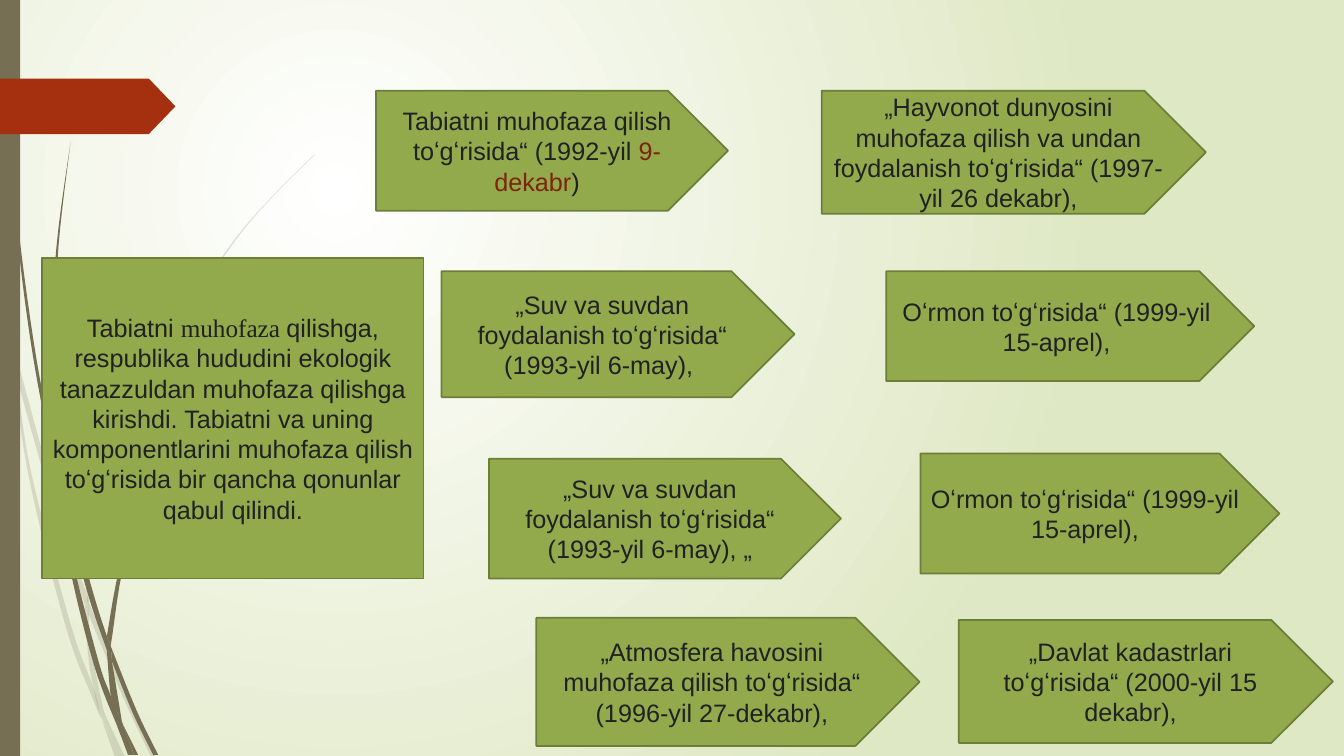
from lxml import etree
from pptx import Presentation, util as u
from pptx.dml.color import RGBColor
from pptx.enum import shapes, text
from pptx.oxml.ns import qn

GREEN, EDGE, INK, RUST, BROWN = "92AA4C", "6C7E38", "202122", "7C240C", "766F54"
FLAG, BG = "A53010", ["FFFFFF", "DFE8C4"]
SANS, SERIF = "Arial", "Times New Roman"
ARROW, RECT = shapes.MSO_SHAPE.PENTAGON, shapes.MSO_SHAPE.RECTANGLE

PALE_BLADES = [
    ([(0.11, 3.5), (0.09, 3.22), (0, 2.82)], [(0, 2.99), (0.1, 3.44)]),
    ([(0.14, 3.45), (0.62, 5.2), (0.85, 5.86)],
     [(0.84, 5.99), (0.58, 5.22), (0.17, 3.76)]),
    ([(0.88, 5.96), (0.92, 6.07), (1.27, 6.92), (1.55, 7.51)],
     [(1.5, 7.51), (1.23, 6.94), (0.88, 6.1)]),
    ([(1.05, 7.11), (1.24, 7.51)], [(1.19, 7.51), (1.05, 7.11)]),
    ([(0.11, 3.5), (0.28, 4.7), (0.65, 6.21), (0.92, 6.93), (1.01, 7.14)],
     [(0.99, 7.07), (0.93, 6.83), (0.7, 6.19), (0.31, 4.69), (0.17, 3.76)]),
    ([(0.84, 5.99), (0.87, 6.46), (0.93, 6.83), (1.05, 7.11)],
     [(1.03, 7.06), (0.91, 6.46), (0.88, 6.08)]),
    ([(0.88, 5.96), (0.88, 5.84), (1.1, 4.62), (1.6, 3.49), (2.29, 2.45),
      (2.68, 1.98), (3.12, 1.54)],
     [(3.12, 1.53), (2.68, 1.97), (2.28, 2.44), (1.58, 3.48), (1.07, 4.61),
      (0.85, 5.84)]),
    ([(1.01, 7.14), (1.14, 7.51)], [(1.19, 7.51), (1.01, 7.14)]),
    ([(0.88, 6.1), (0.88, 5.96), (0.85, 5.86)], [(0.84, 5.99), (0.88, 6.08)]),
    ([(0.93, 6.83), (0.99, 7.07), (1.19, 7.51)], [(1.05, 7.11), (0.96, 6.92)]),
]
DARK_BLADES = [
    ([(0.03, 0), (0.04, 0.48), (0.07, 1.1), (0.17, 2.33), (0.33, 3.55),
      (0.57, 4.81)],
     [(0.55, 4.53), (0.36, 3.55), (0.19, 2.32), (0.08, 1.09), (0.05, 0.48),
      (0.04, 0)]),
    ([(0.6, 4.72), (0.93, 5.9), (1.06, 6.31)],
     [(1.06, 6.45), (0.88, 5.92), (0.64, 5.05)]),
    ([(1.1, 6.41), (1.13, 6.49), (1.36, 7.06), (1.57, 7.49)],
     [(1.52, 7.49), (1.32, 7.08), (1.11, 6.56)]),
    ([(0.57, 4.77), (0.68, 5.57), (0.93, 6.59), (1.17, 7.22)],
     [(1.16, 7.17), (1.1, 6.91), (0.98, 6.57), (0.72, 5.56), (0.64, 5.05)]),
    ([(0.6, 4.72), (0.58, 4.53), (0.54, 3.49), (0.58, 2.45), (0.7, 1.41)],
     [(0.7, 1.41), (0.56, 2.45), (0.51, 3.49), (0.55, 4.49), (0.6, 4.72)]),
    ([(1.22, 7.19), (1.37, 7.49)], [(1.33, 7.49), (1.22, 7.19)]),
    ([(1.1, 6.41), (1.11, 6.33), (1.25, 5.52), (1.58, 4.76), (2.05, 4.06),
      (2.31, 3.74), (2.61, 3.44)],
     [(2.6, 3.44), (2.31, 3.73), (2.04, 4.05), (1.56, 4.74), (1.22, 5.51),
      (1.06, 6.31)]),
    ([(1.17, 7.22), (1.27, 7.49)], [(1.31, 7.49), (1.17, 7.22)]),
    ([(1.06, 6.45), (1.1, 6.91), (1.16, 7.06), (1.22, 7.19)],
     [(1.21, 7.16), (1.11, 6.56), (1.09, 6.51)]),
    ([(1.06, 6.45), (1.11, 6.56)], [(1.1, 6.41), (1.06, 6.31)]),
    ([(1.1, 6.91), (1.17, 7.22), (1.3, 7.49)],
     [(1.33, 7.49), (1.22, 7.19), (1.16, 7.06)]),
]

WATER = "„Suv va suvdan foydalanish toʻgʻrisida“ (1993-yil 6-may), "
FOREST = "Oʻrmon toʻgʻrisida“ (1999-yil 15-aprel),"
BOXES = [
    (ARROW, (3.73, 0.9, 3.49, 1.19),
     [("Tabiatni muhofaza qilish toʻgʻrisida“ (1992-yil ", SANS, INK),
      ("9-dekabr", SANS, RUST), (")", SANS, INK)]),
    (RECT, (0.42, 2.56, 3.78, 3.18),
     [("Tabiatni ", SANS, INK), ("muhofaza ", SERIF, INK),
      ("qilishga, respublika hududini ekologik tanazzuldan muhofaza qilishga "
       "kirishdi. Tabiatni va uning komponentlarini muhofaza qilish "
       "toʻgʻrisida bir qancha qonunlar qabul qilindi.", SANS, INK)]),
    (ARROW, (4.85, 4.55, 3.49, 1.19), [(WATER + "„", SANS, INK)]),
    (ARROW, (4.38, 2.69, 3.5, 1.25), [(WATER, SANS, INK)]),
    (ARROW, (5.32, 6.13, 3.8, 1.27),
     [("„Atmosfera havosini muhofaza qilish toʻgʻrisida“ (1996-yil 27-dekabr),",
       SANS, INK)]),
    (ARROW, (8.15, 0.9, 3.81, 1.22),
     [("„Hayvonot dunyosini muhofaza qilish va undan foydalanish toʻgʻrisida“ "
       "(1997-yil 26 dekabr),", SANS, INK)]),
    (ARROW, (9.51, 6.15, 3.71, 1.22),
     [("„Davlat kadastrlari toʻgʻrisida“ (2000-yil 15 dekabr),", SANS, INK)]),
    (ARROW, (8.79, 2.69, 3.65, 1.09), [(FOREST, SANS, INK)]),
    (ARROW, (9.13, 4.5, 3.56, 1.19), [(FOREST, SANS, INK)]),
]


def rgb(value):
    return RGBColor.from_string(value)


def paint(sp, fill, line=None):
    sp.shadow.inherit = False
    sp.fill.solid()
    sp.fill.fore_color.rgb = rgb(fill)
    if line:
        sp.line.color.rgb = rgb(line)
        sp.line.width = u.Pt(1.25)
    else:
        sp.line.fill.background()


def add_shape(s, kind, box, fill, line=None):
    sp = s.shapes.add_shape(kind, *map(u.Inches, box))
    paint(sp, fill, line)
    return sp


def smooth(points, steps=6):
    ends = [points[0], *points, points[-1]]
    curve = []
    for a, b, c, d in zip(ends, ends[1:], ends[2:], ends[3:]):
        for t in (k / steps for k in range(steps)):
            curve.append(tuple(
                0.5 * (2 * q + (r - p) * t + (2 * p - 5 * q + 4 * r - v) * t ** 2
                       + (3 * q - p - 3 * r + v) * t ** 3)
                for p, q, r, v in zip(a, b, c, d)))
    return curve + [points[-1]]


def add_blade(s, edges, opacity):
    outline = [(u.Inches(x), u.Inches(y))
               for edge in edges for x, y in smooth(edge)]
    builder = s.shapes.build_freeform(*outline[0], scale=1.0)
    builder.add_line_segments(outline[1:], close=True)
    sp = builder.convert_to_shape()
    paint(sp, BROWN)
    if opacity < 100:
        color = sp._element.spPr.find(qn("a:solidFill"))[0]
        etree.SubElement(color, qn("a:alpha"), val=str(opacity * 1000))


def set_background(s):
    fill = s.background.fill
    fill.gradient()
    for stop, color in zip(fill.gradient_stops, BG):
        stop.color.rgb = rgb(color)
    grad = s._element.find(".//" + qn("a:gradFill"))
    grad.remove(grad.find(qn("a:lin")))
    ring = etree.SubElement(grad, qn("a:path"), {"path": "circle"})
    etree.SubElement(ring, qn("a:fillToRect"),
                     l="50000", t="50000", r="100000", b="100000")


def add_text(sp, runs):
    tf = sp.text_frame
    for key, value in {"word_wrap": True,
                       "vertical_anchor": text.MSO_ANCHOR.MIDDLE}.items():
        setattr(tf, key, value)
    p = tf.paragraphs[0]
    p.alignment = text.PP_ALIGN.CENTER
    for words, font, color in runs:
        r = p.add_run()
        r.text = words
        for key, value in {"name": font, "size": u.Pt(18)}.items():
            setattr(r.font, key, value)
        r.font.color.rgb = rgb(color)


def main():
    prs = Presentation()
    prs.slide_width, prs.slide_height = u.Inches(13.33), u.Inches(7.5)
    s = prs.slides.add_slide(prs.slide_layouts[6])
    set_background(s)
    for blades, opacity in ((PALE_BLADES, 20), (DARK_BLADES, 100)):
        for edges in blades:
            add_blade(s, edges, opacity)
    add_shape(s, RECT, (0, 0, 0.2, 7.5), BROWN)
    flag = add_shape(s, ARROW, (0, 0.78, 1.74, 0.55), FLAG)
    flag.adjustments[0] = 0.48
    for kind, box, runs in BOXES:
        add_text(add_shape(s, kind, box, GREEN, EDGE), runs)
    prs.save("out.pptx")


if __name__ == "__main__":
    main()
